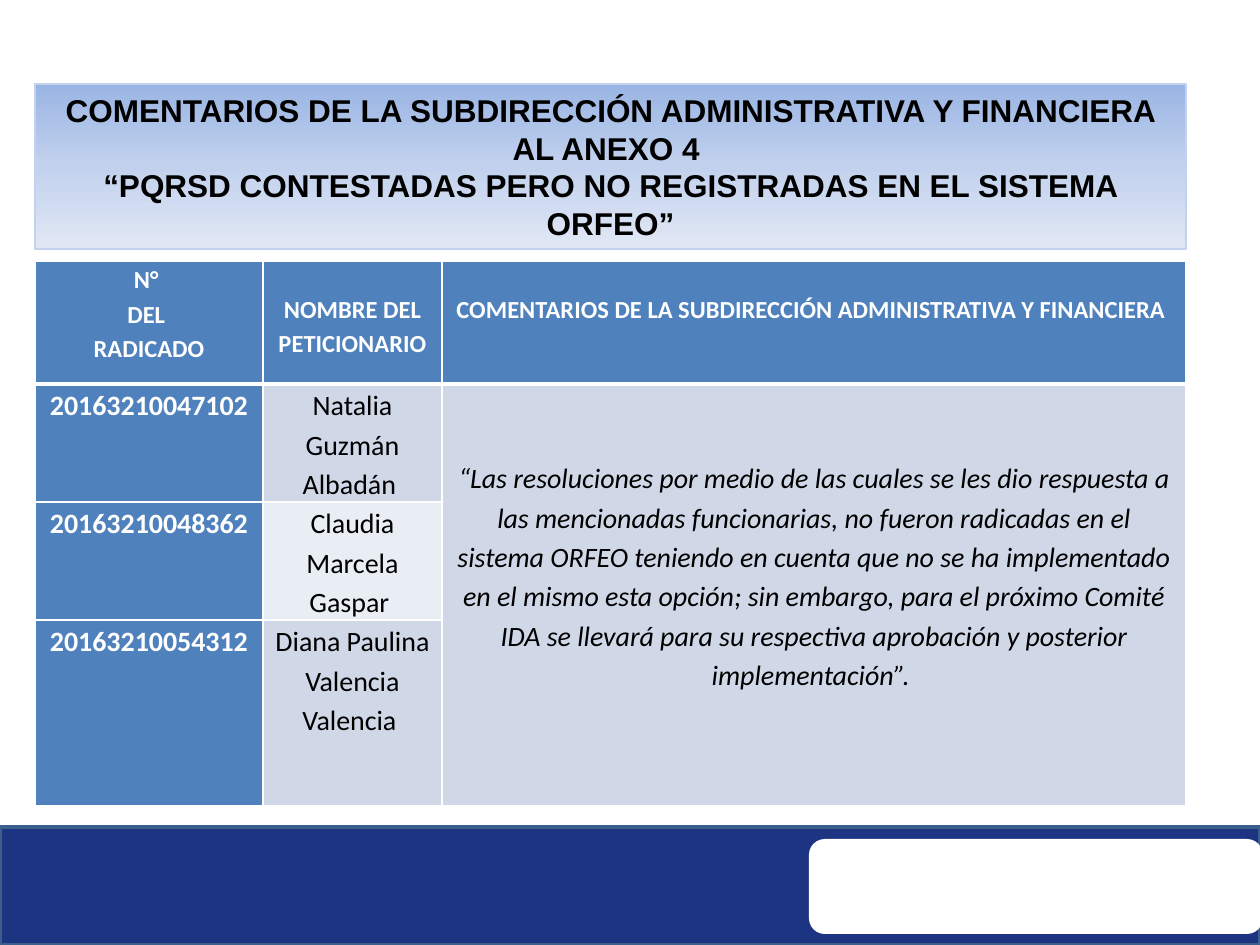
from copy import deepcopy

from lxml import etree
from pptx import Presentation
from pptx.dml.color import RGBColor
from pptx.enum.shapes import MSO_SHAPE
from pptx.enum.text import MSO_ANCHOR, PP_ALIGN
from pptx.oxml.ns import qn
from pptx.util import Pt

PX = 914400 / 126
RECT, ROUND = MSO_SHAPE.RECTANGLE, MSO_SHAPE.ROUNDED_RECTANGLE
CENTER, TOP, MIDDLE = PP_ALIGN.CENTER, MSO_ANCHOR.TOP, MSO_ANCHOR.MIDDLE

WHITE = RGBColor(0xFF, 0xFF, 0xFF)
BLACK = RGBColor(0x00, 0x00, 0x00)
NAVY = RGBColor(0x1C, 0x34, 0x81)
EDGE = RGBColor(0x3A, 0x5F, 0x8C)
BLUE = RGBColor(0x4F, 0x81, 0xBD)
PALE = RGBColor(0xD0, 0xD8, 0xE8)
LIGHT = RGBColor(0xE9, 0xED, 0xF4)
SKY = RGBColor(0x9A, 0xB5, 0xE4)
MIST = RGBColor(0xC2, 0xD1, 0xED)
HAZE = RGBColor(0xE1, 0xE8, 0xF5)

TITLE = [
    "COMENTARIOS DE LA SUBDIRECCIÓN ADMINISTRATIVA Y FINANCIERA AL ANEXO 4 ",
    "“PQRSD CONTESTADAS PERO NO REGISTRADAS EN EL SISTEMA ORFEO”",
]
HEADS = [
    (["N° ", "DEL ", "RADICADO"], 0),
    (["NOMBRE DEL PETICIONARIO"], 30),
    (["COMENTARIOS DE LA SUBDIRECCIÓN ADMINISTRATIVA Y FINANCIERA "], 30),
]
CASES = [
    ("20163210047102", ["Natalia Guzmán Albadán "]),
    ("20163210048362", ["Claudia Marcela Gaspar "]),
    ("20163210054312", ["Diana Paulina Valencia", "Valencia "]),
]
QUOTE = (
    "“Las resoluciones por medio de las cuales se les dio respuesta a las "
    "mencionadas funcionarias, no fueron radicadas en el sistema ORFEO "
    "teniendo en cuenta que no se ha implementado en el mismo esta opción; "
    "sin embargo, para el próximo Comité IDA se llevará para su respectiva "
    "aprobación y posterior implementación”. "
)
COLS = [228, 179, 744]
ROWS = [123, 115, 116, 186]


def px(n):
    return round(n * PX)


def write(frame, lines, size=16, color=BLACK, bold=False, italic=False,
          face="Calibri", space=1.15):
    frame.word_wrap = True
    for i, line in enumerate(lines):
        para = frame.add_paragraph() if i else frame.paragraphs[0]
        para.alignment = CENTER
        para.line_spacing = space
        run = para.add_run()
        run.text = line
        font = run.font
        font.name, font.size = face, Pt(size)
        font.bold, font.italic = bold, italic
        font.color.rgb = color


def add_box(slide, kind, box, fill=None, line=None, width=1):
    shape = slide.shapes.add_shape(kind, *map(px, box))
    shape.shadow.inherit = False
    if fill is not None:
        shape.fill.solid()
        shape.fill.fore_color.rgb = fill
    if line is None:
        shape.line.fill.background()
    else:
        shape.line.color.rgb = line
        shape.line.width = Pt(width)
    return shape


def add_footer(slide, box):
    left, top, _, _ = box
    add_box(slide, RECT, box, NAVY, EDGE, 2)
    add_box(slide, ROUND, (left + 809, top + 12, 454, 95), WHITE)


def add_title(slide, box):
    shape = add_box(slide, RECT, box, line=MIST, width=0.75)
    fill = shape.fill
    fill.gradient()
    fill.gradient_angle = 270
    for stop, color, pos in zip(fill.gradient_stops, (SKY, HAZE), (0, 1)):
        stop.color.rgb, stop.position = color, pos
    stops = shape.element.spPr.find(qn("a:gradFill")).find(qn("a:gsLst"))
    stops.insert(1, deepcopy(stops[0]))
    mid = fill.gradient_stops[1]
    mid.color.rgb, mid.position = MIST, 0.5
    shape.text_frame.vertical_anchor = MIDDLE
    write(shape.text_frame, TITLE, size=18, bold=True, face="Arial", space=1)


def set_edges(cell, top=1, bottom=1):
    props = cell._tc.get_or_add_tcPr()
    widths = {"lnL": 1, "lnR": 1, "lnT": top, "lnB": bottom}
    for i, (tag, width) in enumerate(widths.items()):
        line = etree.Element(qn("a:" + tag), w=str(Pt(width)))
        fill = etree.SubElement(line, qn("a:solidFill"))
        etree.SubElement(fill, qn("a:srgbClr"), val=str(WHITE))
        props.insert(i, line)


def fill_cell(cell, lines, fill, drop=0, **style):
    """Fill a cell; drop is the gap above its text."""
    cell.margin_left = cell.margin_right = px(9)
    cell.margin_top, cell.margin_bottom = px(drop), 0
    cell.vertical_anchor = TOP
    cell.fill.solid()
    cell.fill.fore_color.rgb = fill
    write(cell.text_frame, lines, **style)


def add_cases(slide, box):
    grid = slide.shapes.add_table(len(ROWS), len(COLS), *map(px, box)).table
    for col, width in zip(grid.columns, COLS):
        col.width = px(width)
    for row, height in zip(grid.rows, ROWS):
        row.height = px(height)
    for r in range(len(ROWS)):
        for c in range(len(COLS)):
            set_edges(grid.cell(r, c), top=3 if r == 1 else 1,
                      bottom=3 if r == 0 else 1)
    for c, (lines, drop) in enumerate(HEADS):
        fill_cell(grid.cell(0, c), lines, BLUE, drop,
                  size=14, color=WHITE, bold=True)
    for r, (code, name) in enumerate(CASES, 1):
        fill_cell(grid.cell(r, 0), [code], BLUE, color=WHITE, bold=True)
        fill_cell(grid.cell(r, 1), name, PALE if r % 2 else LIGHT)
    grid.cell(1, 2).merge(grid.cell(len(CASES), 2))
    fill_cell(grid.cell(1, 2), [QUOTE], PALE, 73, italic=True)


def main():
    deck = Presentation()
    deck.slide_width, deck.slide_height = px(1260), px(945)
    slide = deck.slides.add_slide(deck.slide_layouts[6])
    add_footer(slide, (0, 827, 1260, 118))
    add_cases(slide, (35, 261, sum(COLS), sum(ROWS)))
    add_title(slide, (35, 84, 1151, 165))
    deck.save("out.pptx")


if __name__ == "__main__":
    main()
